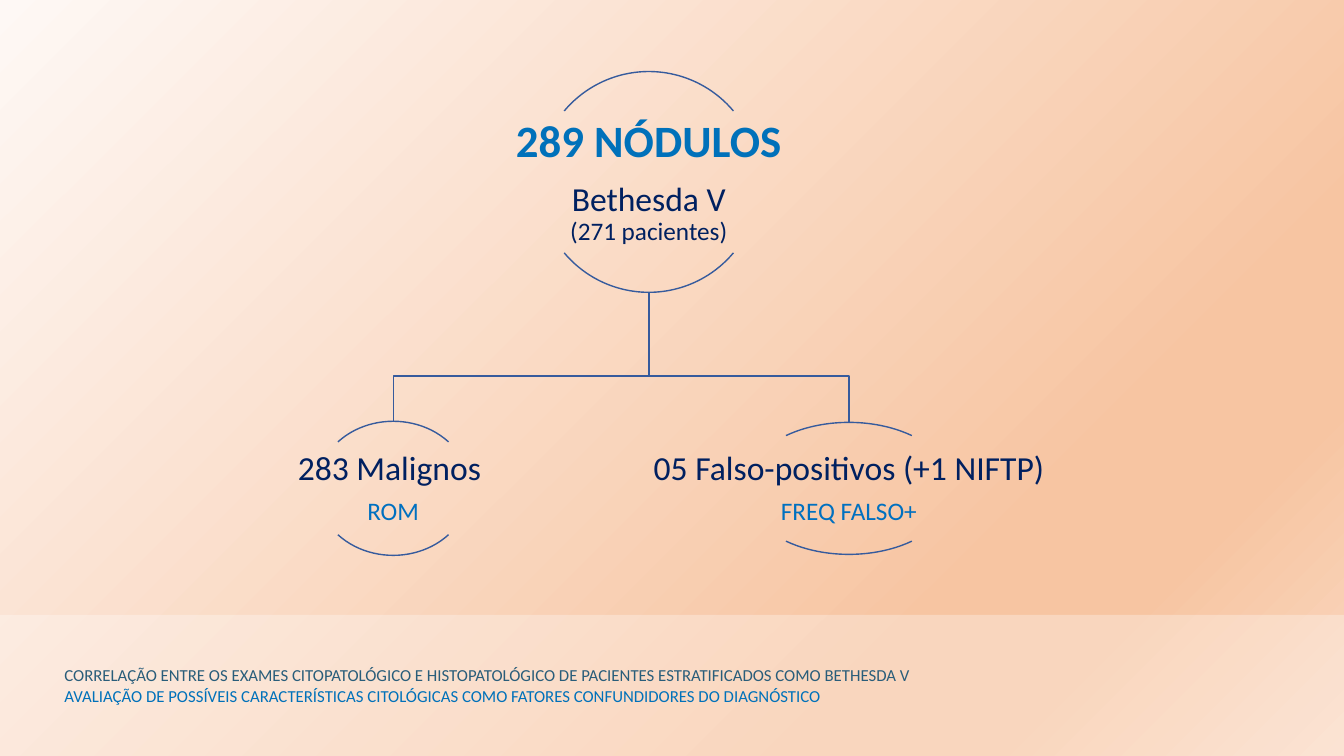
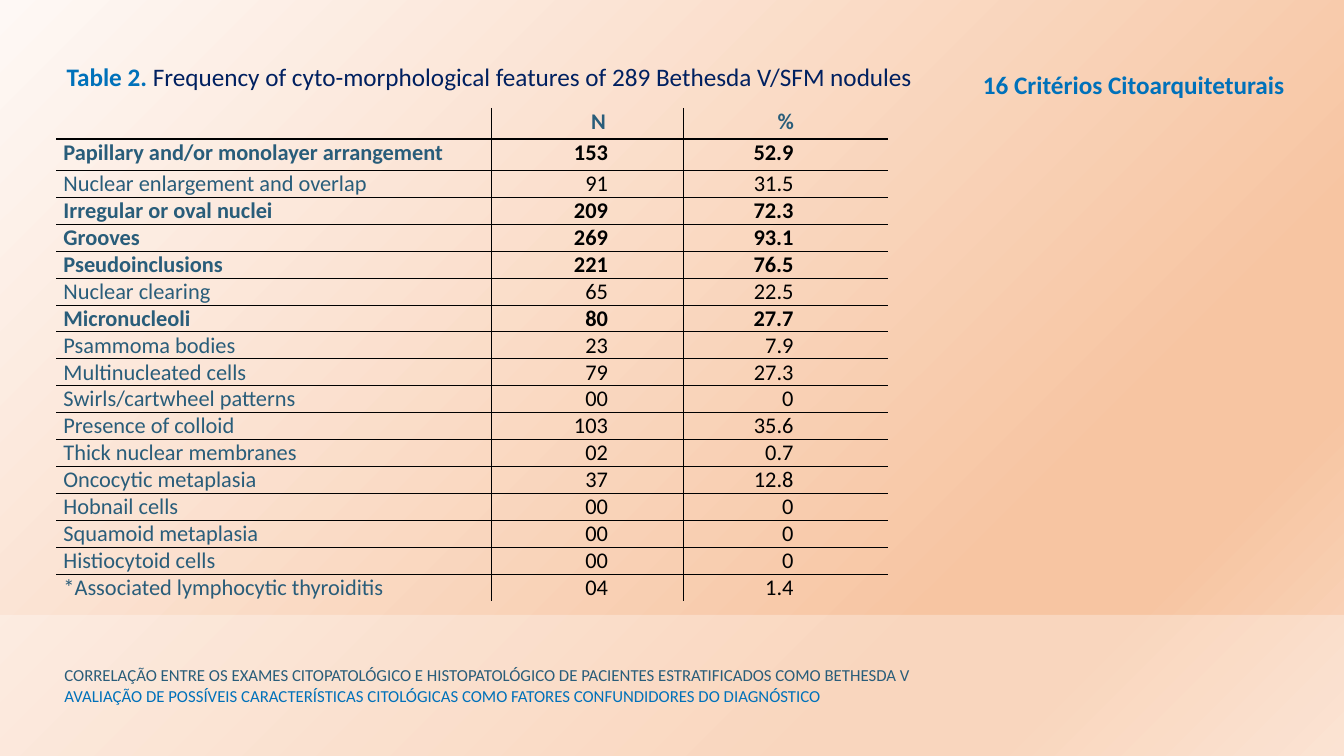
from lxml.etree import SubElement
from pptx import Presentation
from pptx.dml.color import RGBColor
from pptx.enum.shapes import MSO_SHAPE
from pptx.enum.text import MSO_ANCHOR, MSO_AUTO_SIZE, PP_ALIGN
from pptx.oxml.ns import qn
from pptx.util import Inches, Pt

FONT = "Calibri"
COLORS = {
    "blue": "0071BA", "sky": "0070C0", "navy": "002060", "teal": "295D7A",
    "line": "365B9D", "black": "000000", "white": "FFFFFF",
}
BACKGROUND_STOPS = [(0, "FEF8F5"), (74, "F7C5A2"), (83, "F7C5A2"), (100, "FAD8C1")]
WIDTH, HEIGHT = 13.33, 7.5
BAND_TOP = 6.1
ARC_SPANS = [(220, 320), (40, 140)]  # degrees, clockwise from the right

FOOTER = [
    ("CORRELAÇÃO ENTRE OS EXAMES CITOPATOLÓGICO E HISTOPATOLÓGICO DE PACIENTES "
     "ESTRATIFICADOS COMO BETHESDA V", "teal"),
    ("AVALIAÇÃO DE POSSÍVEIS CARACTERÍSTICAS CITOLÓGICAS COMO FATORES "
     "CONFUNDIDORES DO DIAGNÓSTICO", "blue"),
]
COLUMN_WIDTHS = [4.31, 1.91, 2.03]
RIGHT_MARGINS = [0.07, 0.75, 0.94]
HEADER = ["", "N", "%"]
FEATURES = [
    ("Papillary and/or monolayer arrangement", "153", "52.9"),
    ("Nuclear enlargement and overlap", "91", "31.5"),
    ("Irregular or oval nuclei", "209", "72.3"),
    ("Grooves", "269", "93.1"),
    ("Pseudoinclusions", "221", "76.5"),
    ("Nuclear clearing", "65", "22.5"),
    ("Micronucleoli", "80", "27.7"),
    ("Psammoma bodies", "23", "7.9"),
    ("Multinucleated cells", "79", "27.3"),
    ("Swirls/cartwheel patterns", "00", "0"),
    ("Presence of colloid", "103", "35.6"),
    ("Thick nuclear membranes", "02", "0.7"),
    ("Oncocytic metaplasia", "37", "12.8"),
    ("Hobnail cells", "00", "0"),
    ("Squamoid metaplasia", "00", "0"),
    ("Histiocytoid cells", "00", "0"),
    ("*Associated lymphocytic thyroiditis", "04", "1.4"),
]
BOLD_ROWS = {0, 1, 3, 4, 5, 7}


def rgb(name):
    return RGBColor.from_string(COLORS[name])


def place(shape, box):
    shape.left, shape.top, shape.width, shape.height = [Inches(side) for side in box]


def add_span(para, text, size, color, bold=False):
    span = para.add_run()
    span.text = text
    span.font.name = FONT
    span.font.size = Pt(size)
    span.font.bold = bold
    span.font.color.rgb = rgb(color)


def next_para(frame, index):
    return frame.add_paragraph() if index else frame.paragraphs[0]


def add_text_box(page, box):
    shape = page.shapes.add_textbox(*[Inches(side) for side in box])
    shape.text_frame.word_wrap = True
    return shape


def outline(shape):
    shape.shadow.inherit = False
    shape.fill.background()
    shape.line.color.rgb = rgb("line")
    shape.line.width = Pt(1)


def set_background(master):
    fill = master.background.fill
    fill.gradient()
    fill.gradient_angle = 315
    stops = master.element.find(".//" + qn("a:gsLst"))
    for stop in list(stops):
        stops.remove(stop)
    for position, color in BACKGROUND_STOPS:
        stop = SubElement(stops, qn("a:gs"), pos=str(position * 1000))
        SubElement(stop, qn("a:srgbClr"), val=color)


def add_footer_to_layout(layout, page):
    """Draw the band and footer text, then move them to the layout."""
    band = page.shapes.add_shape(
        MSO_SHAPE.RECTANGLE, 0, Inches(BAND_TOP), Inches(WIDTH), Inches(HEIGHT - BAND_TOP))
    band.shadow.inherit = False
    band.line.fill.background()
    band.fill.solid()
    band.fill.fore_color.rgb = rgb("white")
    color = band.element.spPr.find(".//" + qn("a:srgbClr"))
    SubElement(color, qn("a:alpha"), val="30000")

    footer = add_text_box(page, (0.54, 6.55, 9.02, 0.5))
    for index, (text, color) in enumerate(FOOTER):
        add_span(next_para(footer.text_frame, index), text, 12, color)

    for number, shape in enumerate((band, footer), start=101):
        shape.element.find(".//" + qn("p:cNvPr")).set("id", str(number))
        layout.shapes.element.append(shape.element)


def add_node(page, box, paragraphs, title=None):
    """Two arcs around a centred text, which goes in the title if one is given."""
    left, top, width, height = box
    for span in ARC_SPANS:
        arc = page.shapes.add_shape(MSO_SHAPE.ARC, *[Inches(side) for side in box])
        for index, degrees in enumerate(span):
            arc.adjustments[index] = degrees * 0.6
        outline(arc)

    text_box = (left - width / 2, top + 0.18 * height, 2 * width, 0.64 * height)
    label = title or add_text_box(page, text_box)
    place(label, text_box)
    frame = label.text_frame
    frame.auto_size = MSO_AUTO_SIZE.NONE
    frame.vertical_anchor = MSO_ANCHOR.MIDDLE
    frame.margin_left = frame.margin_right = Inches(0.02)
    frame.margin_top = frame.margin_bottom = Inches(0.02)
    for index, lines in enumerate(paragraphs):
        para = next_para(frame, index)
        para.alignment = PP_ALIGN.CENTER
        para.line_spacing = 0.9
        para.space_after = Pt(round(0.35 * lines[0][1]))
        for number, line in enumerate(lines):
            if number:
                para.add_line_break()
            add_span(para, *line)


def add_branch(page, parent, child, bend):
    """Bent line from the bottom of one node to the top of another."""
    start_x = parent[0] + parent[2] / 2
    end_x = child[0] + child[2] / 2
    points = [(start_x, bend), (end_x, bend), (end_x, child[1])]
    builder = page.shapes.build_freeform(
        Inches(start_x), Inches(parent[1] + parent[3]), scale=1.0)
    builder.add_line_segments([(Inches(x), Inches(y)) for x, y in points], close=False)
    outline(builder.convert_to_shape())


def build_tree_page(page):
    root = (5.34, 0.71, 2.19, 2.19)
    malignant = (3.14, 4.18, 1.52, 1.33)
    false_positive = (7.38, 4.19, 2.08, 1.31)
    for child in (false_positive, malignant):
        add_branch(page, root, child, 3.73)
    add_node(page, root, [
        [("289 NÓDULOS", 32, "blue", True)],
        [("Bethesda V", 24, "navy"), ("(271 pacientes)", 18, "navy")],
    ], page.shapes.title)
    add_node(page, malignant, [
        [("283 Malignos ", 24, "navy")], [("ROM", 18, "sky")]])
    add_node(page, false_positive, [
        [("05 Falso-positivos (+1 NIFTP)", 24, "navy")], [("FREQ FALSO+", 18, "sky")]])


def set_borders(cell, widths):
    """Black borders, widths in points by side; 0 hides a side."""
    properties = cell._tc.get_or_add_tcPr()
    for side in "LRTB":
        width = widths[side]
        border = SubElement(properties, qn("a:ln" + side), w=str(int(Pt(width))))
        if width:
            fill = SubElement(border, qn("a:solidFill"))
            SubElement(fill, qn("a:srgbClr"), val=COLORS["black"])
        else:
            SubElement(border, qn("a:noFill"))


def fill_cell(cell, text, row, column, last_row):
    last_column = len(COLUMN_WIDTHS) - 1
    set_borders(cell, {
        "L": 0.5 if column else 0,
        "R": 0.5 if column < last_column else 0,
        "T": (0, 1.5)[row] if row < 2 else 0.5,
        "B": 1.5 if row == 0 else 0.5 if row < last_row else 0,
    })
    cell.fill.background()
    cell.margin_top = cell.margin_bottom = 0
    cell.margin_left = Inches(0.29 if column == 1 else 0.07)
    cell.margin_right = Inches(RIGHT_MARGINS[column] if row else 0.07)
    para = cell.text_frame.paragraphs[0]
    para.font.size = Pt(16)
    if row == 0:
        para.alignment = PP_ALIGN.CENTER
    elif column:
        para.alignment = PP_ALIGN.RIGHT
    if text:
        color = "black" if row and column else "teal"
        add_span(para, text, 16, color, row in BOLD_ROWS)


def add_feature_table(page, left, top):
    rows = [HEADER, *FEATURES]
    heights = [0.31, 0.31] + [0.26] * (len(rows) - 2)
    table = page.shapes.add_table(
        len(rows), len(HEADER), Inches(left), Inches(top),
        Inches(sum(COLUMN_WIDTHS)), Inches(sum(heights))).table
    table.first_row = table.horz_banding = False
    for column, width in zip(table.columns, COLUMN_WIDTHS):
        column.width = Inches(width)
    for row, (height, values) in enumerate(zip(heights, rows)):
        table.rows[row].height = Inches(height)
        for column, text in enumerate(values):
            fill_cell(table.cell(row, column), text, row, column, len(rows) - 1)


def build_table_page(page):
    title = page.shapes.title
    place(title, (0.56, 0.56, 9.18, 0.4))
    title.text_frame.auto_size = MSO_AUTO_SIZE.NONE
    title.text_frame.vertical_anchor = MSO_ANCHOR.TOP
    para = title.text_frame.paragraphs[0]
    para.alignment = PP_ALIGN.LEFT
    add_span(para, "Table 2. ", 18, "blue", True)
    add_span(para, "Frequency of cyto-morphological features of 289 Bethesda V/SFM nodules",
             18, "navy")

    criteria = add_text_box(page, (9.65, 0.34, 3.52, 0.62))
    para = criteria.text_frame.paragraphs[0]
    para.line_spacing = 2.0
    add_span(para, "16 Critérios Citoarquiteturais", 18, "blue", True)

    add_feature_table(page, 0.56, 1.07)


def main():
    deck = Presentation()
    deck.slide_width, deck.slide_height = Inches(WIDTH), Inches(HEIGHT)
    set_background(deck.slide_master)
    layout = deck.slide_layouts.get_by_name("Title Only")
    tree_page, table_page = [deck.slides.add_slide(layout) for _ in range(2)]
    add_footer_to_layout(layout, tree_page)
    build_tree_page(tree_page)
    build_table_page(table_page)
    deck.save("out.pptx")


if __name__ == "__main__":
    main()
